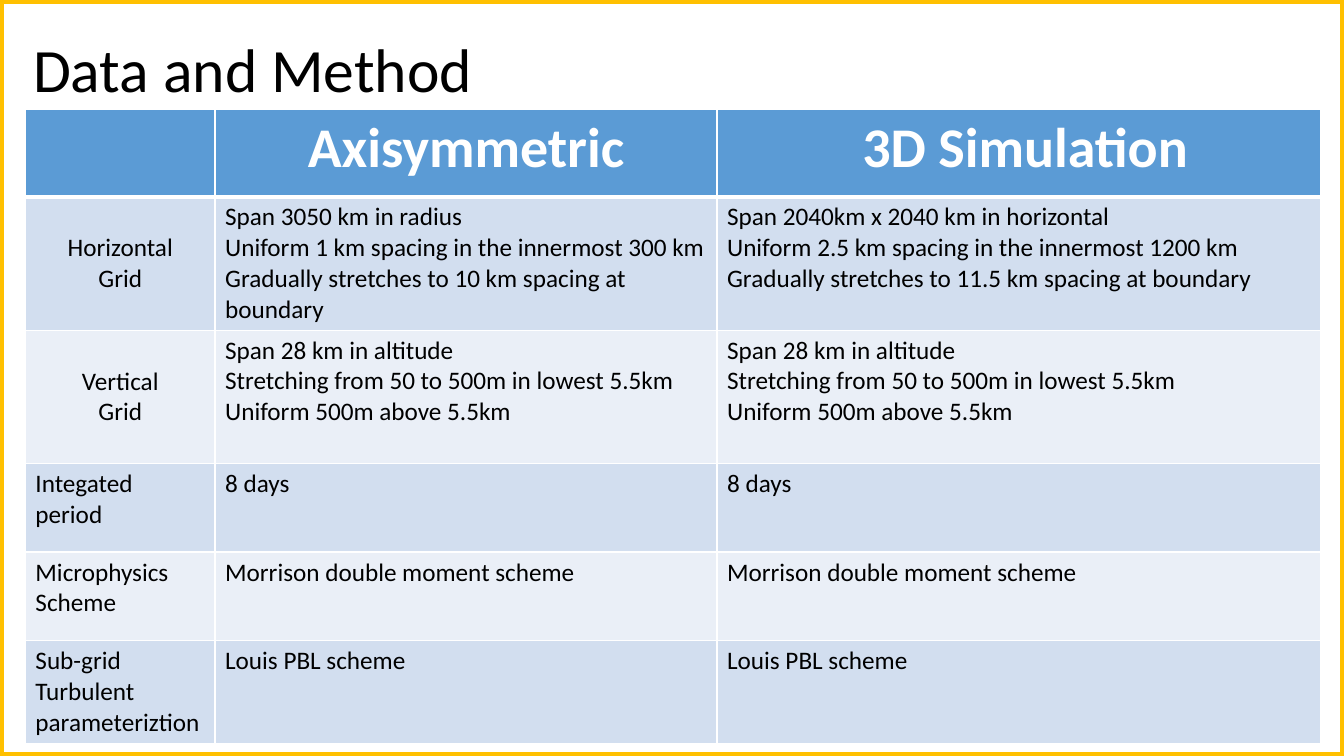
from pptx import Presentation
from pptx.dml.color import RGBColor
from pptx.enum.shapes import MSO_SHAPE
from pptx.enum.text import MSO_ANCHOR, PP_ALIGN
from pptx.oxml import parse_xml
from pptx.oxml.ns import nsdecls
from pptx.util import Cm, Pt

FONT = "Calibri"
WIDE, HIGH = 33.87, 19.05
COLS = [4.78, 12.65, 15.21]
ROWS = [2.21, 3.36, 3.36, 2.23, 2.23, 2.6]
BANDS = ["D2DEEF", "EAEFF7"]
HEAD = {"size": Pt(40), "bold": True, "name": FONT}
BODY = {"size": Pt(18), "bold": False, "name": FONT}
TITLE = {"size": Pt(44), "bold": False, "name": FONT}

LEVELS = "Span 28 km in altitude\nStretching from 50 to 500m in lowest 5.5km\nUniform 500m above 5.5km"
CELLS = [
    ["", "Axisymmetric", " 3D Simulation"],
    ["Horizontal\nGrid",
     "Span 3050 km in radius\nUniform 1 km spacing in the innermost 300 km\n"
     "Gradually stretches to 10 km spacing at boundary",
     "Span 2040km x 2040 km in horizontal\nUniform 2.5 km spacing in the innermost 1200 km\n"
     "Gradually stretches to 11.5 km spacing at boundary"],
    ["Vertical\nGrid", LEVELS, LEVELS],
    ["Integated\nperiod", "8 days", "8 days"],
    ["Microphysics\nScheme"] + ["Morrison double moment scheme"] * 2,
    ["Sub-grid\nTurbulent\nparameteriztion"] + ["Louis PBL scheme"] * 2,
]


def tint(color):
    return RGBColor.from_string(color)


def style(frame, look, color, align):
    for para in frame.paragraphs:
        para.alignment = align
        for key, value in look.items():
            setattr(para.font, key, value)
        para.font.color.rgb = tint(color)


def border(cell, row):
    widths = {"L": 1, "R": 1, "T": 3 if row == 1 else 1, "B": 3 if row == 0 else 1}
    props = cell._tc.get_or_add_tcPr()
    for spot, (side, width) in enumerate(widths.items()):
        props.insert(spot, parse_xml(
            f'<a:ln{side} {nsdecls("a")} w="{Pt(width)}"><a:solidFill>'
            f'<a:srgbClr val="FFFFFF"/></a:solidFill></a:ln{side}>'))


def add_title(slide, left, top, width, height):
    title = slide.shapes.title
    place = {"left": left, "top": top, "width": width, "height": height}
    for key, value in place.items():
        setattr(title, key, Cm(value))
    frame = title.text_frame
    frame.text = "Data and Method"
    frame.vertical_anchor = MSO_ANCHOR.MIDDLE
    style(frame, TITLE, "000000", PP_ALIGN.LEFT)
    frame.paragraphs[0].line_spacing = 0.9


def add_frame(slide, *box):
    frame = slide.shapes.add_shape(MSO_SHAPE.RECTANGLE, *map(Cm, box))
    frame.shadow.inherit = False
    frame.fill.background()
    frame.line.color.rgb = tint("FFC000")
    frame.line.width = Pt(6)


def add_grid(slide, left, top):
    box = map(Cm, (left, top, sum(COLS), sum(ROWS)))
    table = slide.shapes.add_table(len(ROWS), len(COLS), *box).table
    for col, width in zip(table.columns, COLS):
        col.width = Cm(width)
    for row, (line, height, texts) in enumerate(zip(table.rows, ROWS, CELLS)):
        line.height = Cm(height)
        for col, text in enumerate(texts):
            cell = line.cells[col]
            cell.text = text
            cell.fill.solid()
            cell.fill.fore_color.rgb = tint(BANDS[(row - 1) % 2] if row else "5B9BD5")
            border(cell, row)
            label = col == 0 and row in (1, 2)
            if label:
                cell.vertical_anchor = MSO_ANCHOR.MIDDLE
            align = PP_ALIGN.CENTER if label or row == 0 else PP_ALIGN.LEFT
            look, color = (BODY, "000000") if row else (HEAD, "FFFFFF")
            style(cell.text_frame, look, color, align)


def main():
    deck = Presentation()
    deck.slide_width, deck.slide_height = Cm(WIDE), Cm(HIGH)
    slide = deck.slides.add_slide(deck.slide_layouts[5])
    add_title(slide, 0.58, 0, 29.21, 3.68)
    add_frame(slide, 0, 0, WIDE, HIGH)
    add_grid(slide, 0.64, 2.75)
    deck.save("out.pptx")


if __name__ == "__main__":
    main()
